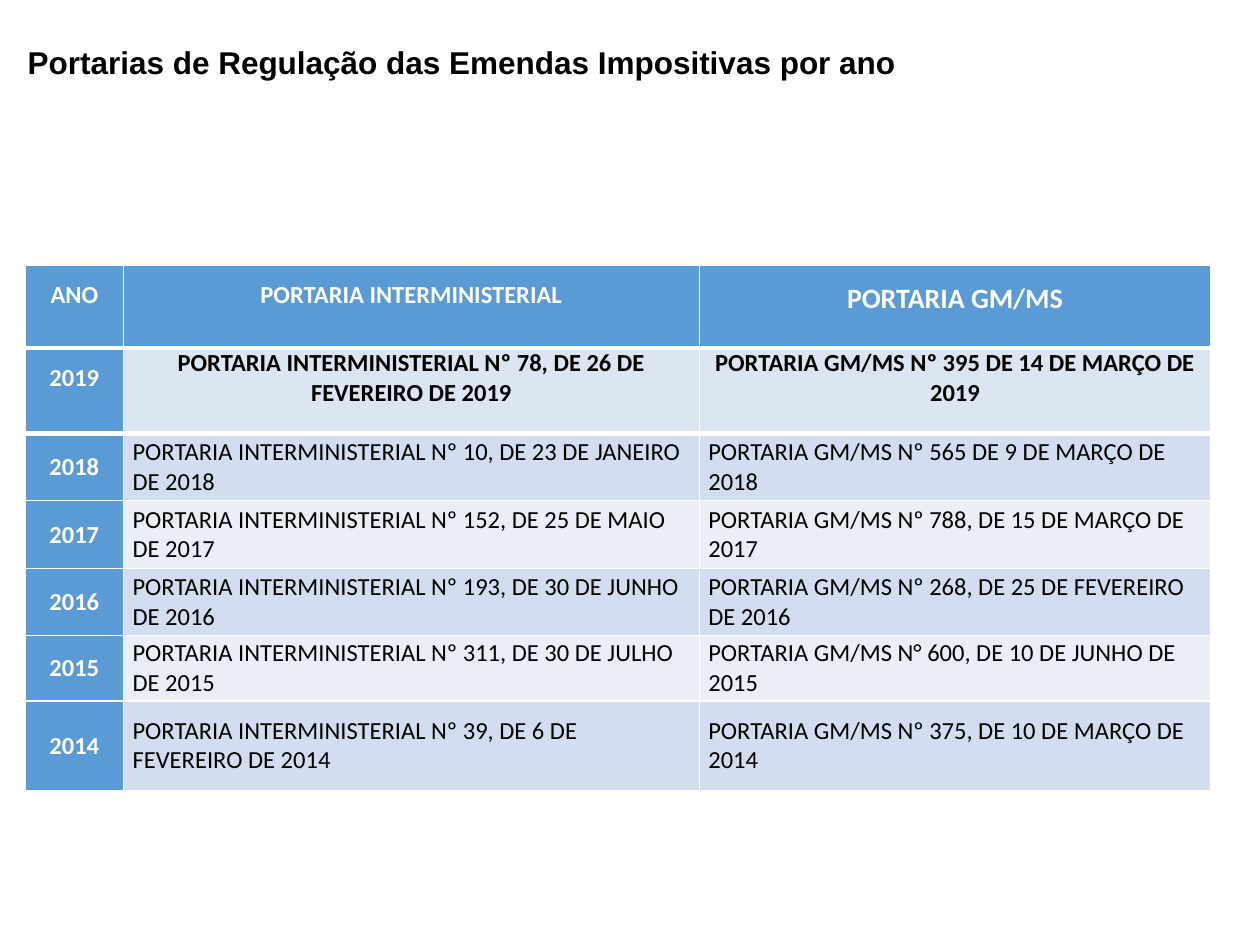
from lxml.etree import SubElement
from pptx import Presentation
from pptx.dml.color import RGBColor as RGB
from pptx.enum.text import MSO_ANCHOR as Anchor, PP_ALIGN as Align
from pptx.oxml.ns import qn
from pptx.util import Pt

COLORS = {"white": "FFFFFF", "black": "000000", "blue": "5B9BD5",
          "new": "DCE6F2", "dark": "D2DEEF", "light": "EAEFF7"}
ROWS = [
    ("ANO", "PORTARIA INTERMINISTERIAL", "PORTARIA GM/MS"),
    ("2019", "PORTARIA INTERMINISTERIAL Nº 78, DE 26 DE FEVEREIRO DE 2019",
     "PORTARIA GM/MS Nº 395 DE 14 DE MARÇO DE 2019"),
    ("2018", "PORTARIA INTERMINISTERIAL Nº 10, DE 23 DE JANEIRO DE 2018",
     "PORTARIA GM/MS Nº 565 DE 9 DE MARÇO DE 2018"),
    ("2017", "PORTARIA INTERMINISTERIAL Nº 152, DE 25 DE MAIO DE 2017",
     "PORTARIA GM/MS Nº 788, DE 15 DE MARÇO DE 2017"),
    ("2016", "PORTARIA INTERMINISTERIAL Nº 193, DE 30 DE JUNHO DE 2016",
     "PORTARIA GM/MS Nº 268, DE 25 DE FEVEREIRO DE 2016"),
    ("2015", "PORTARIA INTERMINISTERIAL Nº 311, DE 30 DE JULHO DE 2015",
     "PORTARIA GM/MS N° 600, DE 10 DE JUNHO DE 2015"),
    ("2014", "PORTARIA INTERMINISTERIAL Nº 39, DE 6 DE FEVEREIRO DE 2014",
     "PORTARIA GM/MS Nº 375, DE 10 DE MARÇO DE 2014"),
]
WIDTHS = [56.2, 329, 292.3]
HEIGHTS = [47.5, 49, 38.2, 38.9, 38.2, 37.4, 51.1]


def style(para, font, size, bold, color):
    para.font.name = font
    para.font.size = Pt(size)
    para.font.bold = bold
    para.font.color.rgb = RGB.from_string(COLORS[color])


def border(cell, top, bottom):
    """Draw white borders; call before the cell is filled."""
    props = cell._tc.get_or_add_tcPr()
    for side, width in (("L", 1), ("R", 1), ("T", top), ("B", bottom)):
        line = SubElement(props, qn("a:ln" + side), w=str(Pt(width)))
        fill = SubElement(line, qn("a:solidFill"))
        SubElement(fill, qn("a:srgbClr"), val=COLORS["white"])


prs = Presentation()
prs.slide_width, prs.slide_height = Pt(720), Pt(540)
slide = prs.slides.add_slide(prs.slide_layouts[5])

title = slide.shapes.title
title.left, title.top, title.width, title.height = Pt(8.6), Pt(20.9), Pt(521.3), Pt(29)
frame = title.text_frame
frame.text = "Portarias de Regulação das Emendas Impositivas por ano"
frame.word_wrap = True
frame.vertical_anchor = Anchor.TOP
para = frame.paragraphs[0]
para.alignment = Align.LEFT
style(para, "Arial", 18, True, "black")

table = slide.shapes.add_table(len(ROWS), len(WIDTHS), Pt(14.4), Pt(151.4),
                               Pt(sum(WIDTHS)), Pt(sum(HEIGHTS))).table
for col, width in zip(table.columns, WIDTHS):
    col.width = Pt(width)

for r, texts in enumerate(ROWS):
    table.rows[r].height = Pt(HEIGHTS[r])
    band = "new" if r == 1 else "light" if r % 2 else "dark"
    for c, text in enumerate(texts):
        cell = table.cell(r, c)
        head = r == 0 or c == 0
        border(cell, 3 if r in (1, 2) else 1, 3 if r < 2 else 1)
        cell.fill.solid()
        cell.fill.fore_color.rgb = RGB.from_string(COLORS["blue" if head else band])
        cell.margin_left = cell.margin_right = Pt(5.2)
        cell.margin_top = cell.margin_bottom = Pt(0)
        cell.vertical_anchor = Anchor.TOP if r < 2 else Anchor.MIDDLE
        cell.text = text
        para = cell.text_frame.paragraphs[0]
        para.alignment = Align.CENTER if head or r == 1 else Align.LEFT
        if head and r < 2:
            para.line_spacing = 1.5
        style(para, "Calibri", 16 if (r, c) == (0, 2) else 14,
              head or r == 1, "white" if head else "black")

prs.save("out.pptx")
